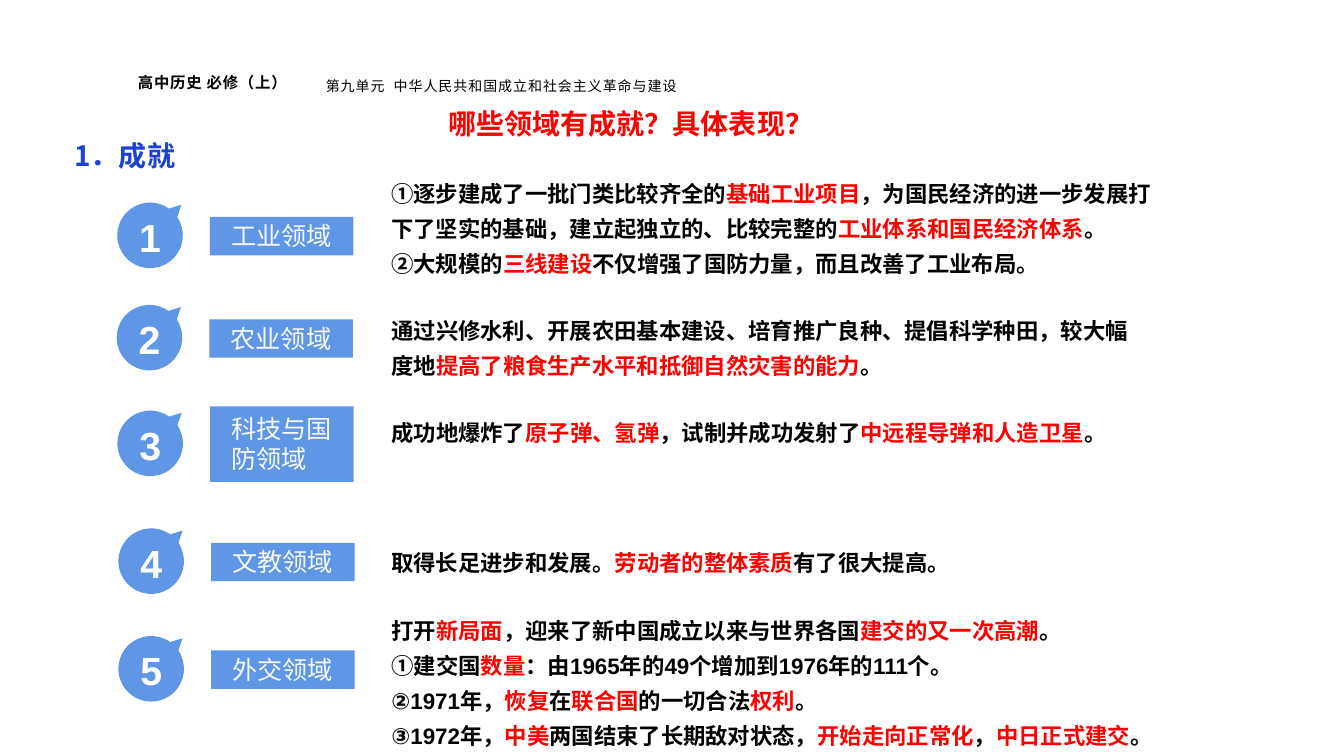
import math
from pptx import Presentation
from pptx.dml.color import RGBColor
from pptx.enum import shapes, text
from pptx.oxml import ns, xmlchemy
from pptx.util import Pt

COLORS = {"black": "000000", "red": "FF0000", "blue": "6096E6",
          "heading": "1D41D5", "label": "F8F8F8", "white": "FFFFFF"}
CJK = "Noto Sans CJK SC"
LATIN = "Arial"
BODY_LEFT = 274.6
RADIUS = 23.4
TAIL = 7.9
TILT = 45.8
RIM_ANGLES = [-79.5, 0, 90, 180, 259.5]

FIELDS = [
    (107.2, 168.1, "工业领域", 27.4, (120.2, 556.6, 81.4), [
        "①逐步建成了一批门类比较齐全的*基础工业项目*，为国民经济的进一步发展打下了坚实的基础，"
        "建立起独立的、比较完整的*工业体系和国民经济体系*。",
        "②大规模的*三线建设*不仅增强了国防力量，而且改善了工业布局。"]),
    (106.8, 241.2, "农业领域", 27.4, (217.8, 545.8, 55.4), [
        "通过兴修水利、开展农田基本建设、培育推广良种、提倡科学种田，较大幅度地"
        "*提高了粮食生产水平和抵御自然灾害的能力*。"]),
    (107.3, 316.7, "科技与国防领域", 54, (290.9, 539.3, 31), [
        "成功地爆炸了*原子弹、氢弹*，试制并成功发射了*中远程导弹和人造卫星*。"]),
    (108, 400.8, "文教领域", 27.4, (383.8, 468, 30.2), [
        "取得长足进步和发展。*劳动者的整体素质*有了很大提高。"]),
    (108, 477.7, "外交领域", 27.4, (432.3, 563, 106.6), [
        "打开*新局面*，迎来了新中国成立以来与世界各国*建交的又一次高潮*。",
        "①建交国*数量*：由1965年的49个增加到1976年的111个。",
        "②1971年，*恢复*在*联合国*的一切合法*权利*。",
        "③1972年，*中美*两国结束了长期敌对状态，*开始走向正常化*，*中日正式建交*。"]),
]


def rgb(name):
    return RGBColor.from_string(COLORS[name])


def style(paragraph, size, color, bold=False, latin=LATIN, spacing=0):
    font = paragraph.font
    font.size, font.bold, font.name = Pt(size), bold, latin
    font.color.rgb = rgb(color)
    props = paragraph._p.pPr.find(ns.qn("a:defRPr"))
    if spacing:
        props.set("spc", str(spacing))
    east_asian = xmlchemy.OxmlElement("a:ea")
    east_asian.set("typeface", CJK)
    props.find(ns.qn("a:latin")).addnext(east_asian)


def add_text(parent, box, paragraphs, size, color, tight=False, line_spacing=None, **font):
    frame = parent.add_textbox(*map(Pt, box)).text_frame
    frame.word_wrap = True
    if tight:
        frame.margin_left = frame.margin_right = Pt(5)
        frame.margin_top = frame.margin_bottom = Pt(3)
    for index, content in enumerate(paragraphs):
        paragraph = frame.add_paragraph() if index else frame.paragraphs[0]
        for part, words in enumerate(content.split("*")):
            run = paragraph.add_run()
            run.text = words
            if part % 2:
                run.font.color.rgb = rgb("red")
        if line_spacing:
            paragraph.line_spacing = line_spacing
        style(paragraph, size, color, **font)
    return frame


def paint(shape):
    shape.shadow.inherit = False
    shape.fill.solid()
    shape.fill.fore_color.rgb = rgb("blue")
    shape.line.fill.background()


def arc_points(start, end):
    start, end = math.radians(start), math.radians(end)
    pull = 4 / 3 * math.tan((end - start) / 4)
    return [(math.cos(start) - pull * math.sin(start), math.sin(start) + pull * math.cos(start)),
            (math.cos(end) + pull * math.sin(end), math.sin(end) - pull * math.cos(end)),
            (math.cos(end), math.sin(end))]


def add_bubble(parent, x, y):
    tilt = math.radians(TILT)
    left = x + TAIL / 2 * math.sin(tilt)
    middle = y - TAIL / 2 * math.cos(tilt) + TAIL / 2
    first = math.radians(RIM_ANGLES[0])
    rim = [(math.cos(first), math.sin(first))]
    for start, end in zip(RIM_ANGLES, RIM_ANGLES[1:]):
        rim += arc_points(start, end)
    outline = parent.build_freeform(Pt(left), Pt(middle - RADIUS - TAIL))
    outline.add_line_segments([(Pt(left + RADIUS * px), Pt(middle + RADIUS * py))
                               for px, py in rim])
    bubble = outline.convert_to_shape()
    segments = list(bubble._element.iter(ns.qn("a:lnTo")))[1:]
    for index in range(0, len(segments), 3):
        curve = xmlchemy.OxmlElement("a:cubicBezTo")
        segments[index].addprevious(curve)
        for segment in segments[index:index + 3]:
            curve.append(segment[0])
            segment.getparent().remove(segment)
    outline_path = next(bubble._element.iter(ns.qn("a:path")))
    outline_path.append(xmlchemy.OxmlElement("a:close"))
    bubble.rotation = TILT
    paint(bubble)


def add_number(parent, x, y, number):
    frame = add_text(parent, (x - 25.2, y - 20.6, 50.4, 43.2), [str(number)], 28, "white",
                     tight=True, bold=True)
    frame.word_wrap = False
    frame.vertical_anchor = text.MSO_ANCHOR.MIDDLE
    frame.paragraphs[0].alignment = text.PP_ALIGN.CENTER


def add_field(slide, number, x, y, label, bar_height, body, paragraphs):
    group = slide.shapes.add_group_shape().shapes
    add_bubble(group, x, y)
    bar_box = (x + 42.8, y + 0.6 - bar_height / 2, 102.5, bar_height)
    paint(group.add_shape(shapes.MSO_SHAPE.RECTANGLE, *map(Pt, bar_box)))
    label_height = 51.1 if bar_height > 50 else 28.8
    add_text(group, (x + 50.8, y + 0.4 - label_height / 2, 91.4, label_height), [label],
             18, "label")
    add_number(group, x, y, number)
    top, width, height = body
    add_text(slide.shapes, (BODY_LEFT, top, width, height), paragraphs, 16, "black",
             tight=True, line_spacing=1.3, bold=True)


def add_heading(slide):
    add_text(slide.shapes, (91.4, 49, 147.6, 35.3), ["高中历史 必修（上）"], 11, "black",
             bold=True, latin=CJK, spacing=50)
    add_text(slide.shapes, (225.6, 51.8, 277.2, 19.4),
             ["第九单元  中华人民共和国成立和社会主义革命与建设"], 10, "black", spacing=70)
    question = slide.shapes.title
    question.left, question.top, question.width, question.height = map(Pt, (313.2, 72.4, 264.2, 31.7))
    frame = question.text_frame
    frame.text = "哪些领域有成就？具体表现？"
    frame.word_wrap = True
    frame.auto_size = text.MSO_AUTO_SIZE.NONE
    frame.vertical_anchor = text.MSO_ANCHOR.TOP
    frame.paragraphs[0].alignment = text.PP_ALIGN.LEFT
    style(frame.paragraphs[0], 20, "red", bold=True)
    add_text(slide.shapes, (46.1, 95.4, 902.2, 31.7), ["1．成就"], 20, "heading",
             bold=True, latin=CJK)


def main():
    deck = Presentation()
    deck.slide_width, deck.slide_height = Pt(960), Pt(540)
    slide = deck.slides.add_slide(deck.slide_layouts[5])
    add_heading(slide)
    for number, field in enumerate(FIELDS, 1):
        add_field(slide, number, *field)
    deck.save("out.pptx")


if __name__ == "__main__":
    main()
